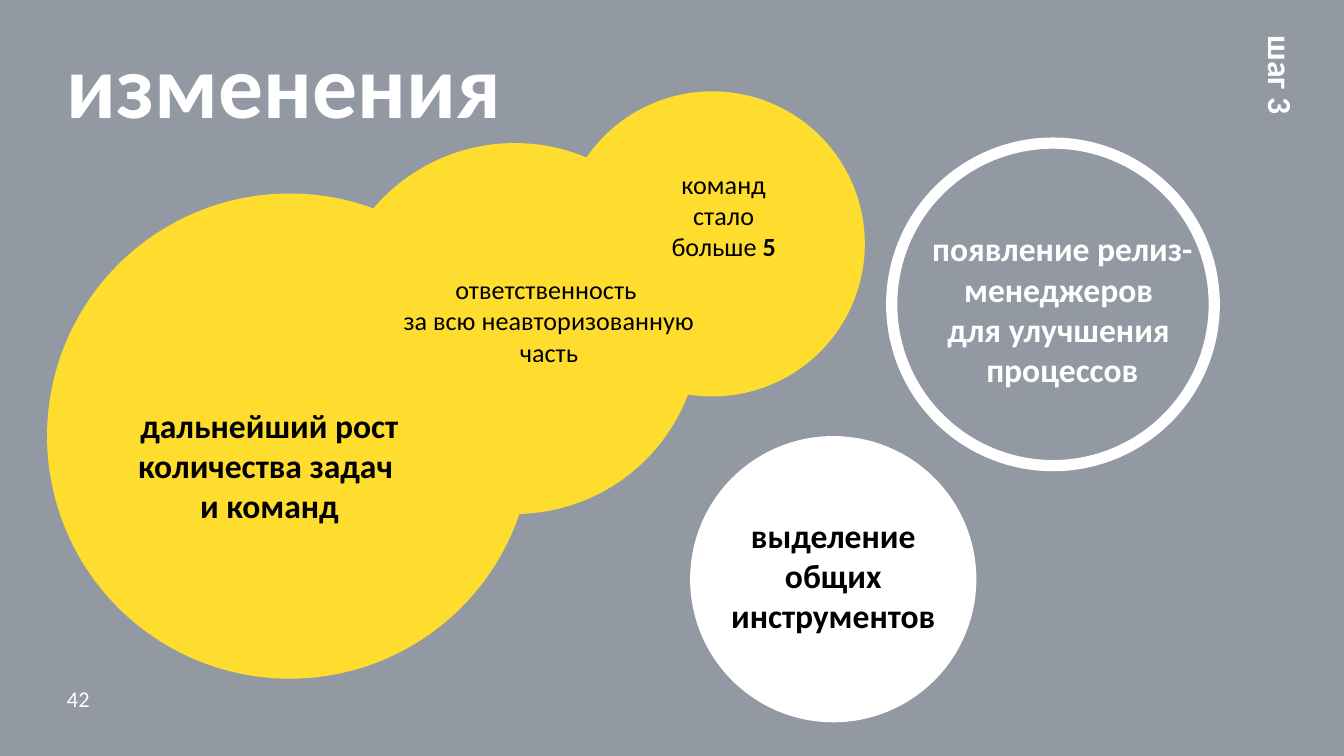
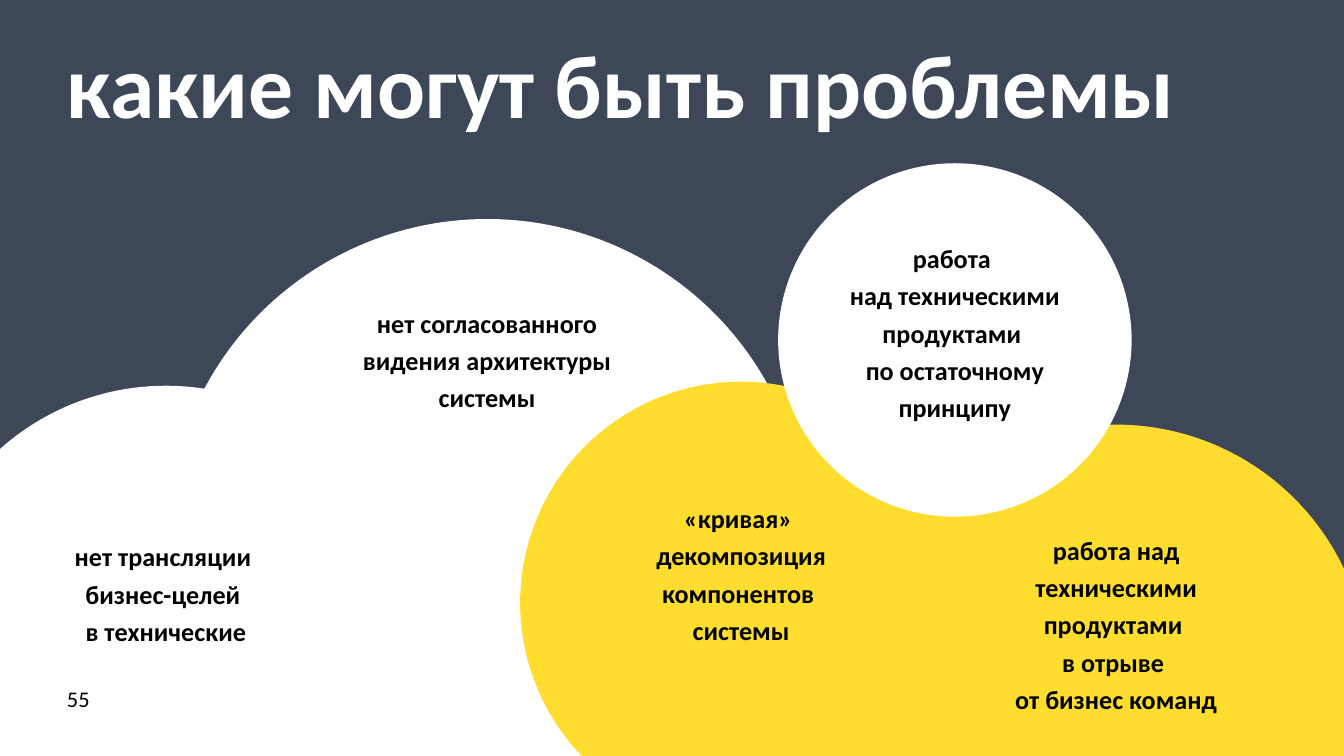
from dataclasses import dataclass

from pptx import Presentation
from pptx.dml.color import RGBColor
from pptx.enum.shapes import MSO_SHAPE
from pptx.enum.text import MSO_ANCHOR, MSO_AUTO_SIZE, PP_ALIGN
from pptx.util import Pt

PX_PER_INCH = 200
EMU_PER_PX = 914400 // PX_PER_INCH
PAGE_WIDTH, PAGE_HEIGHT = 2000, 1125
OVAL, BACKDROP = MSO_SHAPE.OVAL, MSO_SHAPE.ROUNDED_RECTANGLE
LEFT, CENTER = PP_ALIGN.LEFT, PP_ALIGN.CENTER
TOP, MIDDLE = MSO_ANCHOR.TOP, MSO_ANCHOR.MIDDLE
GROW = MSO_AUTO_SIZE.SHAPE_TO_FIT_TEXT
FIXED = MSO_AUTO_SIZE.NONE


@dataclass(frozen=True)
class Theme:
    font: str = "Calibri"
    gray: str = "9299A2"
    navy: str = "3E4757"
    yellow: str = "FFDD2F"
    white: str = "FFFFFF"
    black: str = "000000"
    title: int = 48
    strong: int = 18
    body: int = 14
    number: int = 12
    ring: int = 6
    leading: int = 20


THEME = Theme()

TITLE_AREA = (80, 34, 1800, 188)
NUMBER_AREA = (80, 1010, 466, 60)
STEP_AREA = (1818, 78, 174, 84)
PROBLEM_WIDTH = 472
TEXT_MARGINS = 20
INDENT = 100

# Circles: left, top, diameter
GROWTH_CIRCLES = [(70, 288, 722), (490, 213, 552), (833, 136, 454)]
RELEASE_RING = (1327, 213, 480)
TOOLS_CIRCLE = (1027, 649, 426)

STEP = "шаг 3"
GROWTH = ("дальнейший рост количества задач \nи команд", (68, 592, 666, 202))
GROWTH_DETAILS = [
    ([("ответственность \nза всю неавторизованную часть", False)], (473, 397, 588, 162)),
    ([("команд стало больше ", False), ("5", True)], (861, 240, 332, 162)),
]
RELEASE = ("появление релиз-менеджеров \nдля улучшения \nпроцессов",
           (1248, 330, 666, 262))
TOOLS = ("выделение общих инструментов", (1049, 756, 382, 202))

# Circle, fill, text, top of the text, number of lines
PROBLEMS = [
    ((-124, 574, 742), THEME.white,
     "нет трансляции \nбизнес-целей \nв технические", 786, 3),
    ((248, 326, 954), THEME.white,
     "нет согласованного видения архитектуры системы", 438, 3),
    ((774, 568, 658), THEME.yellow,
     "«кривая» \nдекомпозиция компонентов \nсистемы", 729, 4),
    ((1286, 632, 750), THEME.yellow,
     "работа над техническими продуктами \nв отрыве \nот бизнес команд", 776, 5),
    ((1158, 243, 526), THEME.white,
     "работа \nнад техническими продуктами \nпо остаточному принципу", 342, 5),
]


def px(*lengths):
    return [length * EMU_PER_PX for length in lengths]


def rgb(color):
    return RGBColor.from_string(color)


def add_figure(shapes, kind, area, fill=None, line=None):
    figure = shapes.add_shape(kind, *px(*area))
    figure.shadow.inherit = False
    if fill:
        figure.fill.solid()
        figure.fill.fore_color.rgb = rgb(fill)
    else:
        figure.fill.background()
    if line:
        figure.line.color.rgb = rgb(line)
        figure.line.width = Pt(THEME.ring)
    else:
        figure.line.fill.background()
    return figure


def add_circle(shapes, circle, fill=None, line=None):
    left, top, diameter = circle
    return add_figure(shapes, OVAL, (left, top, diameter, diameter), fill, line)


def add_text(shapes, content, area, size=THEME.strong, color=THEME.black, bold=True,
             align=CENTER, anchor=TOP, fit=GROW, leading=None, indent=0, rotation=0):
    """Content is a string, or a list of (text, bold) parts; newlines break lines."""
    box = shapes.add_textbox(*px(*area))
    box.rotation = rotation
    frame = box.text_frame
    frame.word_wrap = True
    frame.auto_size = fit
    frame.vertical_anchor = anchor
    para = frame.paragraphs[0]
    para.alignment = align
    if leading:
        para.line_spacing = Pt(leading)
    if indent:
        para.level = 1
        properties = para._p.get_or_add_pPr()
        properties.set("marL", str(px(indent)[0]))
        properties.set("indent", "0")
    parts = [(content, bold)] if isinstance(content, str) else content
    for text, part_bold in parts:
        for index, line in enumerate(text.split("\n")):
            if index:
                para.add_line_break()
            span = para.add_run()
            span.text = line
            span.font.name = THEME.font
            span.font.size = Pt(size)
            span.font.bold = part_bold
            span.font.color.rgb = rgb(color)
    return box


def add_page(deck, background, title):
    page = deck.slides.add_slide(deck.slide_layouts[6])
    backdrop = add_figure(page.shapes, BACKDROP, (0, 0, PAGE_WIDTH, PAGE_HEIGHT), background)
    backdrop.adjustments[0] = 0
    add_text(page.shapes, title, TITLE_AREA, size=THEME.title, color=THEME.white,
             align=LEFT, fit=FIXED)
    return page.shapes


def add_number(shapes, number, color):
    add_text(shapes, number, NUMBER_AREA, size=THEME.number, color=color, bold=False,
             align=LEFT, anchor=MIDDLE, fit=FIXED)


def build_changes(deck):
    shapes = add_page(deck, THEME.gray, "изменения")
    add_number(shapes, "42", THEME.white)
    add_text(shapes, STEP, STEP_AREA, color=THEME.white, align=LEFT, fit=FIXED, rotation=90)

    for circle in GROWTH_CIRCLES:
        add_circle(shapes, circle, THEME.yellow)
    add_text(shapes, *GROWTH)
    for parts, area in GROWTH_DETAILS:
        add_text(shapes, parts, area, size=THEME.body, indent=INDENT)

    release = shapes.add_group_shape().shapes
    add_circle(release, RELEASE_RING, line=THEME.white)
    add_text(release, *RELEASE, color=THEME.white)

    tools = shapes.add_group_shape().shapes
    add_circle(tools, TOOLS_CIRCLE, THEME.white)
    add_text(tools, *TOOLS)


def build_problems(deck):
    shapes = add_page(deck, THEME.navy, "какие могут быть проблемы")
    for circle, fill, *_ in PROBLEMS:
        add_circle(shapes, circle, fill)
    add_number(shapes, "55", THEME.black)
    for (left, _, diameter), _, text, top, lines in PROBLEMS:
        text_left = left + (diameter - PROBLEM_WIDTH) // 2
        height = TEXT_MARGINS + round(lines * THEME.leading * PX_PER_INCH / 72)
        add_text(shapes, text, (text_left, top, PROBLEM_WIDTH, height),
                 size=THEME.body, leading=THEME.leading)


def main():
    deck = Presentation()
    deck.slide_width, deck.slide_height = px(PAGE_WIDTH, PAGE_HEIGHT)
    build_changes(deck)
    build_problems(deck)
    deck.save("out.pptx")


if __name__ == "__main__":
    main()
